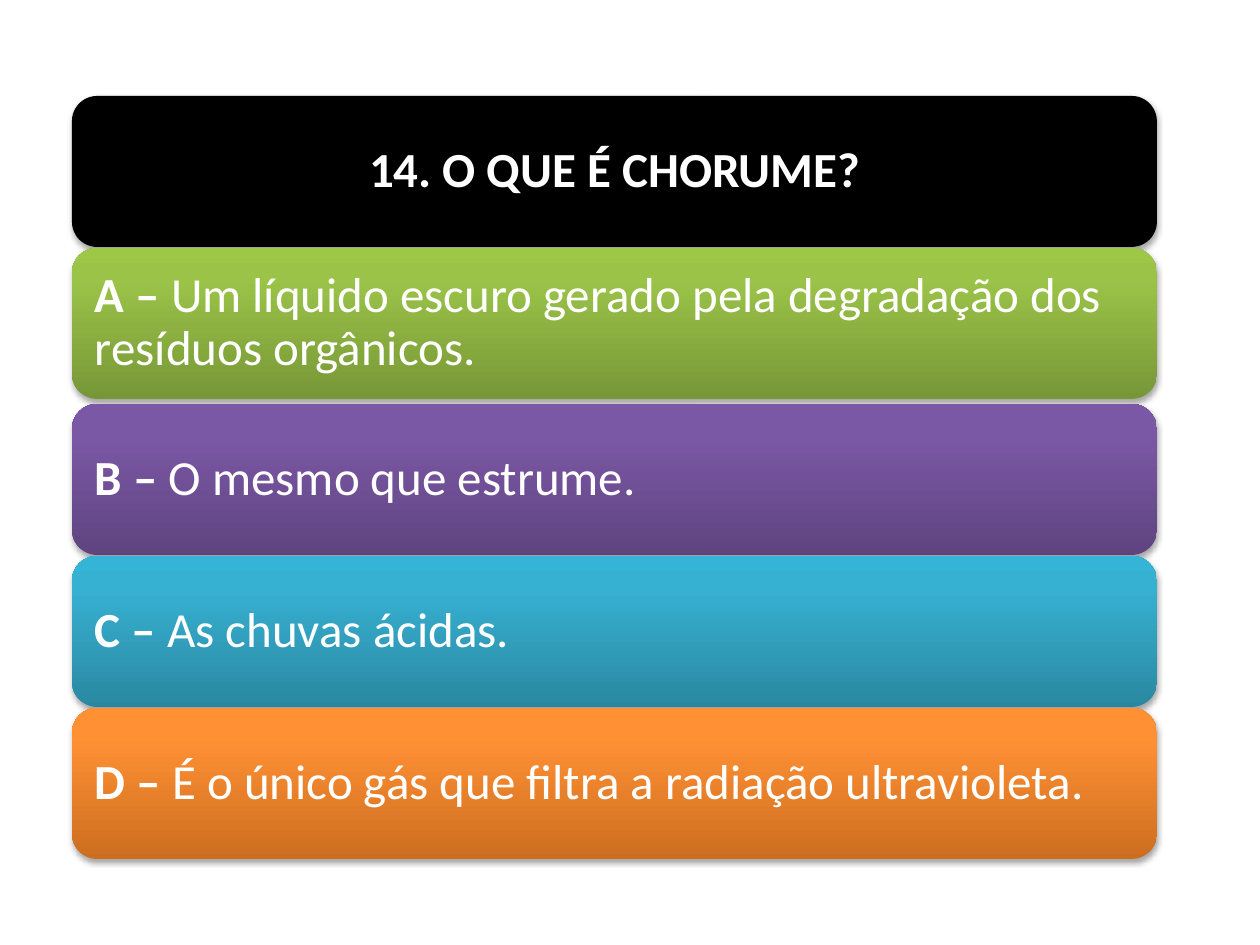
from lxml.etree import SubElement
from pptx import Presentation
from pptx.dml.color import RGBColor
from pptx.enum.shapes import MSO_SHAPE
from pptx.enum.text import MSO_ANCHOR, MSO_AUTO_SIZE, PP_ALIGN
from pptx.oxml.ns import qn

PX = 914400 // 126
PAD = 8
TITLE = "14. O QUE É CHORUME?"
TITLE_BOX = (72, 96, 1085, 151)
OPTIONS = [
    ("A – ", "Um líquido escuro gerado pela degradação dos resíduos orgânicos.",
     248, ("779737", "9BC348", "9DC746")),
    ("B – ", "O mesmo que estrume.", 404, ("5F4480", "7B58A6", "7C57A8")),
    ("C – ", "As chuvas ácidas.", 556, ("2A88A2", "37B1D2", "34B4D6")),
    ("D – ", "É o único gás que filtra a radiação ultravioleta.",
     708, ("CC6E20", "FF9034", "FF9136")),
]
FONT = {"name": "Calibri", "size": 28 * 12700}
FRAME = {"word_wrap": True, "auto_size": MSO_AUTO_SIZE.NONE,
         "vertical_anchor": MSO_ANCHOR.MIDDLE,
         "margin_left": 15 * PX, "margin_right": 15 * PX,
         "margin_top": 15 * PX, "margin_bottom": 15 * PX}


def rgb(value):
    """Turn a hex string into a colour."""
    return RGBColor.from_string(value)


def emu(box):
    """Scale a box in px to EMU."""
    return [v * PX for v in box]


def set_all(obj, values):
    """Set attributes from a dict."""
    for name, value in values.items():
        setattr(obj, name, value)


def add_gradient(sp, colors):
    """Fill a shape with a three-stop gradient rising from the bottom."""
    sp.fill.gradient()
    grad = sp._element.spPr.find(qn("a:gradFill"))
    for child in list(grad):
        grad.remove(child)
    stops = SubElement(grad, qn("a:gsLst"))
    for pos, color in zip((0, 80000, 100000), colors):
        gs = SubElement(stops, qn("a:gs"), pos=str(pos))
        SubElement(gs, qn("a:srgbClr"), val=color)
    SubElement(grad, qn("a:lin"), ang="16200000", scaled="0")


def add_shadow(sp):
    """Give a shape a soft shadow below it."""
    sp.shadow.inherit = False
    effects = sp._element.spPr.find(qn("a:effectLst"))
    shadow = SubElement(effects, qn("a:outerShdw"), blurRad="39370", dist="22860",
                        dir="5400000", rotWithShape="0")
    color = SubElement(shadow, qn("a:srgbClr"), val="000000")
    SubElement(color, qn("a:alpha"), val="35000")


def add_panel(s, box, colors):
    """Draw a rounded panel in one colour or a gradient."""
    sp = s.shapes.add_shape(MSO_SHAPE.ROUNDED_RECTANGLE, *emu(box))
    sp.line.fill.background()
    if len(colors) == 1:
        sp.fill.solid()
        sp.fill.fore_color.rgb = rgb(colors[0])
    else:
        add_gradient(sp, colors)
    add_shadow(sp)


def write_text(sp, runs, align):
    """Write one paragraph of (text, bold) runs into a shape."""
    tf = sp.text_frame
    set_all(tf, FRAME)
    p = tf.paragraphs[0]
    set_all(p, {"alignment": align, "line_spacing": 0.9})
    for text, bold in runs:
        r = p.add_run()
        r.text = text
        set_all(r.font, {**FONT, "bold": bold})
        r.font.color.rgb = rgb("FFFFFF")


def inner(box):
    """Return the text area inside a panel."""
    x, y, w, h = box
    return x + PAD, y + PAD, w - 2 * PAD, h - 2 * PAD


def add_question(s, box):
    """Place the black question panel and the title on it."""
    add_panel(s, box, ("000000",))
    title = s.shapes.title
    s.shapes._spTree.append(title._element)
    set_all(title, dict(zip(("left", "top", "width", "height"), emu(inner(box)))))
    write_text(title, [(TITLE, True)], PP_ALIGN.CENTER)


def add_option(s, box, letter, answer, colors):
    """Place one answer panel and its text."""
    add_panel(s, box, colors)
    sp = s.shapes.add_textbox(*emu(inner(box)))
    write_text(sp, [(letter, True), (answer, False)], PP_ALIGN.LEFT)


def main():
    """Build the quiz slide."""
    prs = Presentation()
    prs.slide_width, prs.slide_height = emu((1260, 945))
    s = prs.slides.add_slide(prs.slide_layouts[5])
    add_question(s, TITLE_BOX)
    left, _, width, height = TITLE_BOX
    for letter, answer, top, colors in OPTIONS:
        add_option(s, (left, top, width, height), letter, answer, colors)
    prs.save("out.pptx")


if __name__ == "__main__":
    main()
